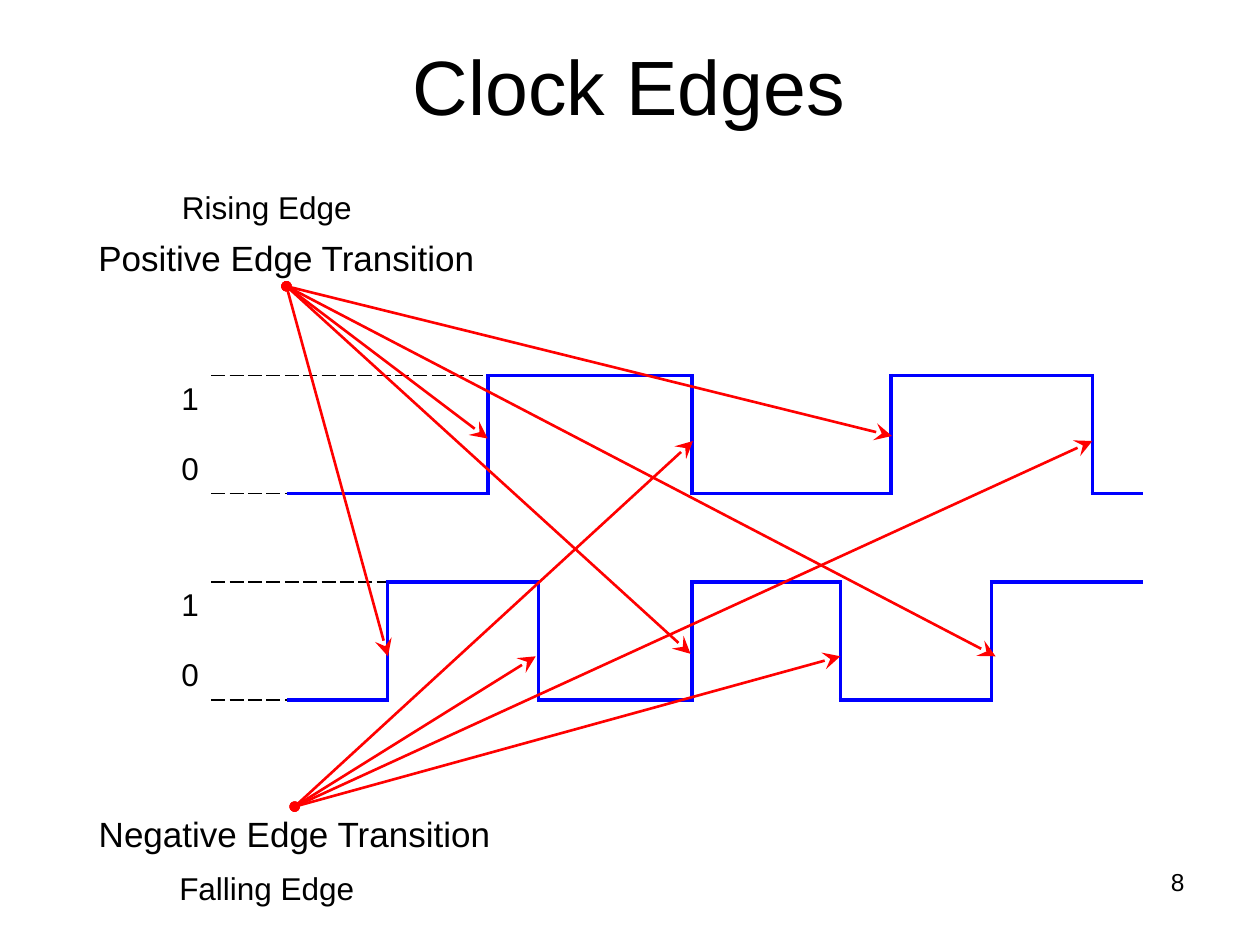
from lxml.etree import SubElement
from pptx import Presentation
from pptx.dml.color import RGBColor
from pptx.enum.shapes import MSO_CONNECTOR
from pptx.enum.text import MSO_ANCHOR, MSO_AUTO_SIZE, PP_ALIGN
from pptx.oxml.ns import qn
from pptx.util import Cm, Pt

BLACK, WHITE, BLUE, RED = "000000", "FFFFFF", "0000FF", "FF0000"
WAVE_LINE = (BLUE, 2.25, "solid")
GUIDE_LINE = (BLACK, 1, "dash")
NO_STYLE = "{2D5ABB26-0587-4C30-8999-92F81FD0307C}"
TOP, BOTTOM = 0, 2  # connection sites

TITLE = ("Clock Edges", (-0.03, 0, 25.43, 3.4))
PAGE_NUMBER = ("8", (18.21, 17.35, 5.92, 1.32))
EDGE_NAMES = [
    ("Rising Edge", (3.4, 3.66, 3.96, 1.02)),
    ("Falling Edge", (3.35, 17.4, 4.06, 1.02)),
]
# label, place, side the arrows leave from, arrow tips
TRANSITIONS = [
    ("Positive Edge Transition", (1.7, 4.65, 8.15, 1.12), BOTTOM,
     [(9.83, 8.84), (17.98, 8.79), (7.82, 13.23), (13.92, 13.18), (20.07, 13.23)]),
    ("Negative Edge Transition", (1.7, 16.26, 8.48, 1.12), TOP,
     [(13.97, 8.89), (10.8, 13.23), (16.94, 13.23), (22.02, 8.89)]),
]

# One letter per time step: High or Low; keyed by table row
WAVES = {1: "LLLLHHHHLLLLHHHHL", 3: "LLHHHLLLHHHLLLHHH"}
STEPS = 17
FIRST_STEP = 2  # the label and guide columns come before it
TABLE_LEFT, TABLE_TOP = 2.76, 6.55
COLUMNS = [1.5, 1.52] + [17.27 / STEPS] * STEPS
COLUMNS[9] += 0.05
COLUMNS[10] -= 0.05
ROWS = [1.02, 2.38, 1.78, 2.38, 1.02]


def colour(value):
    return RGBColor.from_string(value)


def style(paragraph, size, align):
    paragraph.alignment = align
    paragraph.font.size = Pt(size)
    paragraph.font.name = "Arial"
    paragraph.font.color.rgb = colour(BLACK)


def place(shape, area):
    shape.left, shape.top, shape.width, shape.height = map(Cm, area)


def add_text(slide, text, area, size, align=PP_ALIGN.CENTER, wrap=False):
    box = slide.shapes.add_textbox(*map(Cm, area))
    frame = box.text_frame
    frame.text = text
    frame.word_wrap = wrap
    if not wrap:
        frame.auto_size = MSO_AUTO_SIZE.SHAPE_TO_FIT_TEXT
    style(frame.paragraphs[0], size, align)
    return box


def add_arrow(slide, label, side, tip):
    x, y = map(Cm, tip)
    arrow = slide.shapes.add_connector(MSO_CONNECTOR.STRAIGHT, 0, 0, x, y)
    arrow.begin_connect(label, side)
    arrow.line.color.rgb = colour(RED)
    arrow.line.width = Pt(1.5)
    line = arrow.line._get_or_add_ln()
    SubElement(line, qn("a:headEnd"), type="oval")
    SubElement(line, qn("a:tailEnd"), type="stealth", w="lg", len="lg")
    SubElement(arrow._element.spPr, qn("a:effectLst"))


def wave_borders():
    """Map (row, column, side) to a line style, on both cells that share an edge."""
    borders = {}

    def horizontal(row, column, line):
        """Draw along the top of a row."""
        borders[row - 1, column, "B"] = borders[row, column, "T"] = line

    for row, levels in WAVES.items():
        horizontal(row + 1, FIRST_STEP - 1, GUIDE_LINE)
        for column in range(FIRST_STEP - 1, FIRST_STEP + levels.index("H")):
            horizontal(row, column, GUIDE_LINE)
        for step, level in enumerate(levels):
            column = FIRST_STEP + step
            horizontal(row if level == "H" else row + 1, column, WAVE_LINE)
            if step and level != levels[step - 1]:
                borders[row, column - 1, "R"] = borders[row, column, "L"] = WAVE_LINE
    return borders


def draw_border(cell, side, line):
    """Draw one side of a cell, or clear it when there is no line."""
    border = SubElement(cell._tc.get_or_add_tcPr(), qn(f"a:ln{side}"))
    if line is None:
        SubElement(border, qn("a:noFill"))
        return
    value, width, dash = line
    border.set("w", str(Pt(width)))
    fill = SubElement(border, qn("a:solidFill"))
    SubElement(fill, qn("a:srgbClr"), val=value)
    SubElement(border, qn("a:prstDash"), val=dash)


def add_waves(slide):
    table = slide.shapes.add_table(
        len(ROWS), len(COLUMNS), Cm(TABLE_LEFT), Cm(TABLE_TOP),
        Cm(sum(COLUMNS)), Cm(sum(ROWS))).table
    table.first_row = table.horz_banding = False
    table._tbl.tblPr.find(qn("a:tableStyleId")).text = NO_STYLE
    for column, width in zip(table.columns, COLUMNS):
        column.width = Cm(width)
    for row, height in zip(table.rows, ROWS):
        row.height = Cm(height)

    borders = wave_borders()
    for r in range(len(ROWS)):
        for c in range(len(COLUMNS)):
            cell = table.cell(r, c)
            for side in "LRTB":
                draw_border(cell, side, borders.get((r, c, side)))
            cell.fill.solid()
            cell.fill.fore_color.rgb = colour(WHITE)

    for r in WAVES:
        cell = table.cell(r, 0)
        cell.vertical_anchor = MSO_ANCHOR.MIDDLE
        cell.margin_top = cell.margin_bottom = 0
        cell.text_frame.text = "1\n0"
        for para in cell.text_frame.paragraphs:
            style(para, 18, PP_ALIGN.RIGHT)
        cell.text_frame.paragraphs[1].space_before = Pt(20)


def main():
    deck = Presentation()
    deck.slide_width, deck.slide_height = Cm(25.4), Cm(19.05)
    slide = deck.slides.add_slide(deck.slide_layouts[5])

    text, area = TITLE
    title = slide.shapes.title
    place(title, area)
    title.text_frame.text = text
    title.text_frame.vertical_anchor = MSO_ANCHOR.MIDDLE
    style(title.text_frame.paragraphs[0], 44, PP_ALIGN.CENTER)

    add_text(slide, *PAGE_NUMBER, 14, PP_ALIGN.RIGHT, wrap=True)
    add_waves(slide)
    for text, area, side, tips in TRANSITIONS:
        label = add_text(slide, text, area, 20)
        for tip in tips:
            add_arrow(slide, label, side, tip)
    for text, area in EDGE_NAMES:
        add_text(slide, text, area, 18)

    deck.save("out.pptx")


if __name__ == "__main__":
    main()
